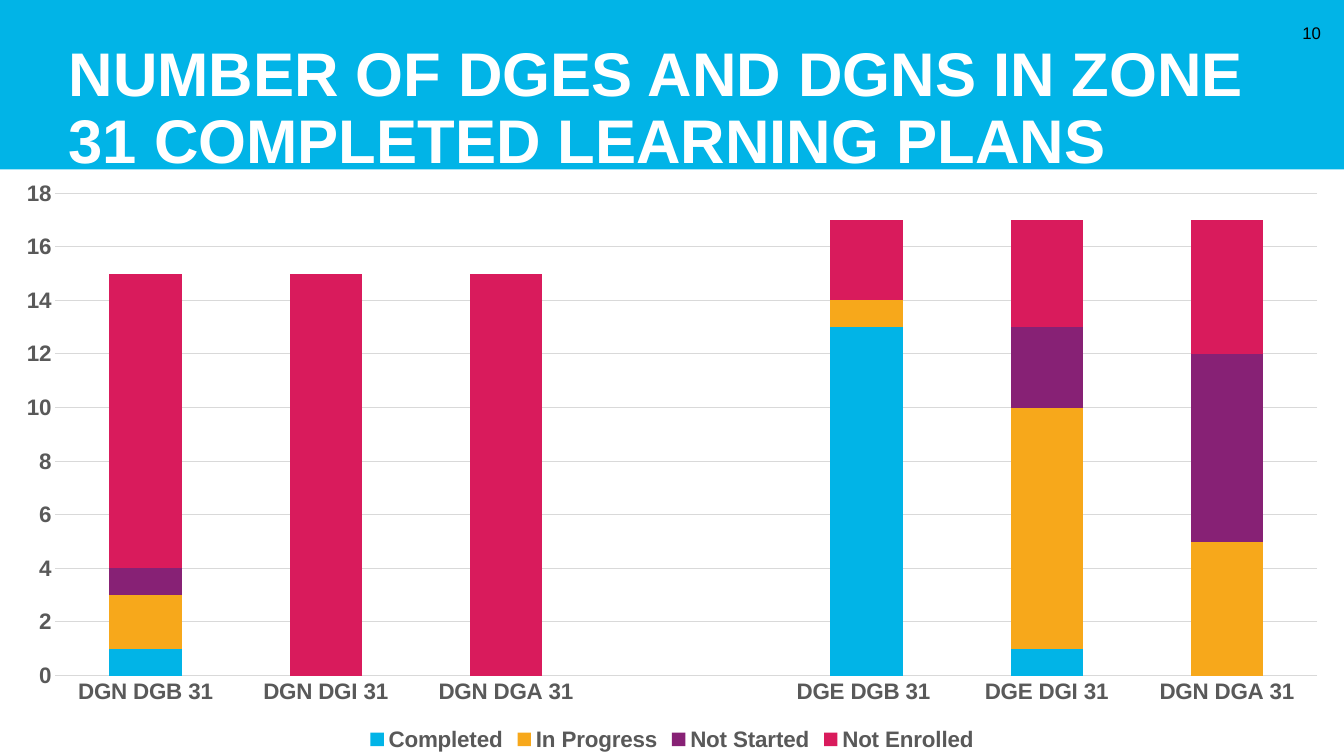
from pptx import Presentation
from pptx.chart.data import CategoryChartData
from pptx.dml.color import RGBColor
from pptx.enum import chart as ch, shapes, text
from pptx.util import Inches, Pt

TITLE = "NUMBER OF DGES AND DGNS IN ZONE 31 COMPLETED LEARNING PLANS"
PAGE = "10"
CATEGORIES = ["DGN DGB 31", "DGN DGI 31", "DGN DGA 31", "",
              "DGE DGB 31 ", "DGE DGI 31", "DGN DGA 31"]
SERIES = [
    ("Completed", "01B4E7", [1, None, None, None, 13, 1, None]),
    ("In Progress", "F7A81B", [2, None, None, None, 1, 9, 5]),
    ("Not Started", "872175", [1, None, None, None, 0, 3, 7]),
    ("Not Enrolled", "D91B5C", [11, 15, 15, None, 3, 4, 5]),
]
BLUE, WHITE, BLACK, GREY, RULE = "01B4E7", "FFFFFF", "000000", "595959", "D9D9D9"
WIDTH, HEIGHT, BANNER = 13.33, 7.5, 1.68


def rgb(value):
    return RGBColor.from_string(value)


def set_font(font, size, color, bold=False):
    font.name, font.size, font.bold = "Arial", Pt(size), bold
    font.color.rgb = rgb(color)


def set_line(line, color):
    line.color.rgb = rgb(color)
    line.width = Pt(0.75)


def place(sp, left, top, width, height):
    sp.left, sp.top, sp.width, sp.height = map(Inches, (left, top, width, height))


def add_banner(s):
    """Put the blue band behind everything else."""
    sp = s.shapes.add_shape(shapes.MSO_SHAPE.RECTANGLE, 0, 0,
                            Inches(WIDTH), Inches(BANNER))
    sp.shadow.inherit = False
    sp.fill.solid()
    sp.fill.fore_color.rgb = rgb(BLUE)
    sp.line.fill.background()
    s.shapes._spTree.insert(2, sp._element)


def add_title(s):
    sp = s.shapes.title
    place(sp, 0.58, 0.17, 12.58, BANNER)
    tf = sp.text_frame
    tf.text = TITLE
    tf.word_wrap = True
    tf.auto_size = text.MSO_AUTO_SIZE.NONE
    tf.vertical_anchor = text.MSO_ANCHOR.BOTTOM
    tf.margin_left = tf.margin_right = tf.margin_bottom = Inches(0.1)
    tf.margin_top = 0
    p = tf.paragraphs[0]
    p.alignment = text.PP_ALIGN.LEFT
    p.line_spacing = 0.9
    set_font(p.font, 44, WHITE, True)


def add_page_number(s):
    sp = s.shapes.add_textbox(0, 0, 0, 0)
    place(sp, 12.74, 0.13, 0.46, 0.4)
    tf = sp.text_frame
    tf.text = PAGE
    tf.word_wrap = True
    tf.vertical_anchor = text.MSO_ANCHOR.MIDDLE
    p = tf.paragraphs[0]
    p.alignment = text.PP_ALIGN.RIGHT
    set_font(p.font, 12, BLACK)


def add_plan_chart(s):
    data = CategoryChartData()
    data.categories = CATEGORIES
    for name, _, values in SERIES:
        data.add_series(name, values)
    chart = s.shapes.add_chart(
        ch.XL_CHART_TYPE.COLUMN_STACKED, 0, Inches(BANNER),
        Inches(WIDTH), Inches(HEIGHT - BANNER), data).chart
    set_font(chart.font, 10, BLACK)
    chart.has_title = False

    plot = chart.plots[0]
    plot.gap_width, plot.overlap, plot.vary_by_categories = 150, 100, False
    for series, (_, color, _) in zip(plot.series, SERIES):
        series.format.fill.solid()
        series.format.fill.fore_color.rgb = rgb(color)

    for axis in (chart.category_axis, chart.value_axis):
        axis.major_tick_mark = axis.minor_tick_mark = ch.XL_TICK_MARK.NONE
        set_font(axis.tick_labels.font, 16, GREY, True)
    set_line(chart.category_axis.format.line, RULE)
    axis = chart.value_axis
    axis.minimum_scale, axis.maximum_scale, axis.major_unit = 0, 18, 2
    axis.format.line.fill.background()
    set_line(axis.major_gridlines.format.line, RULE)

    chart.has_legend = True
    chart.legend.position = ch.XL_LEGEND_POSITION.BOTTOM
    chart.legend.include_in_layout = False
    set_font(chart.legend.font, 16, GREY, True)


def main():
    prs = Presentation()
    prs.slide_width, prs.slide_height = Inches(WIDTH), Inches(HEIGHT)
    s = prs.slides.add_slide(prs.slide_layouts[5])
    add_banner(s)
    add_title(s)
    add_page_number(s)
    add_plan_chart(s)
    prs.save("out.pptx")


if __name__ == "__main__":
    main()
